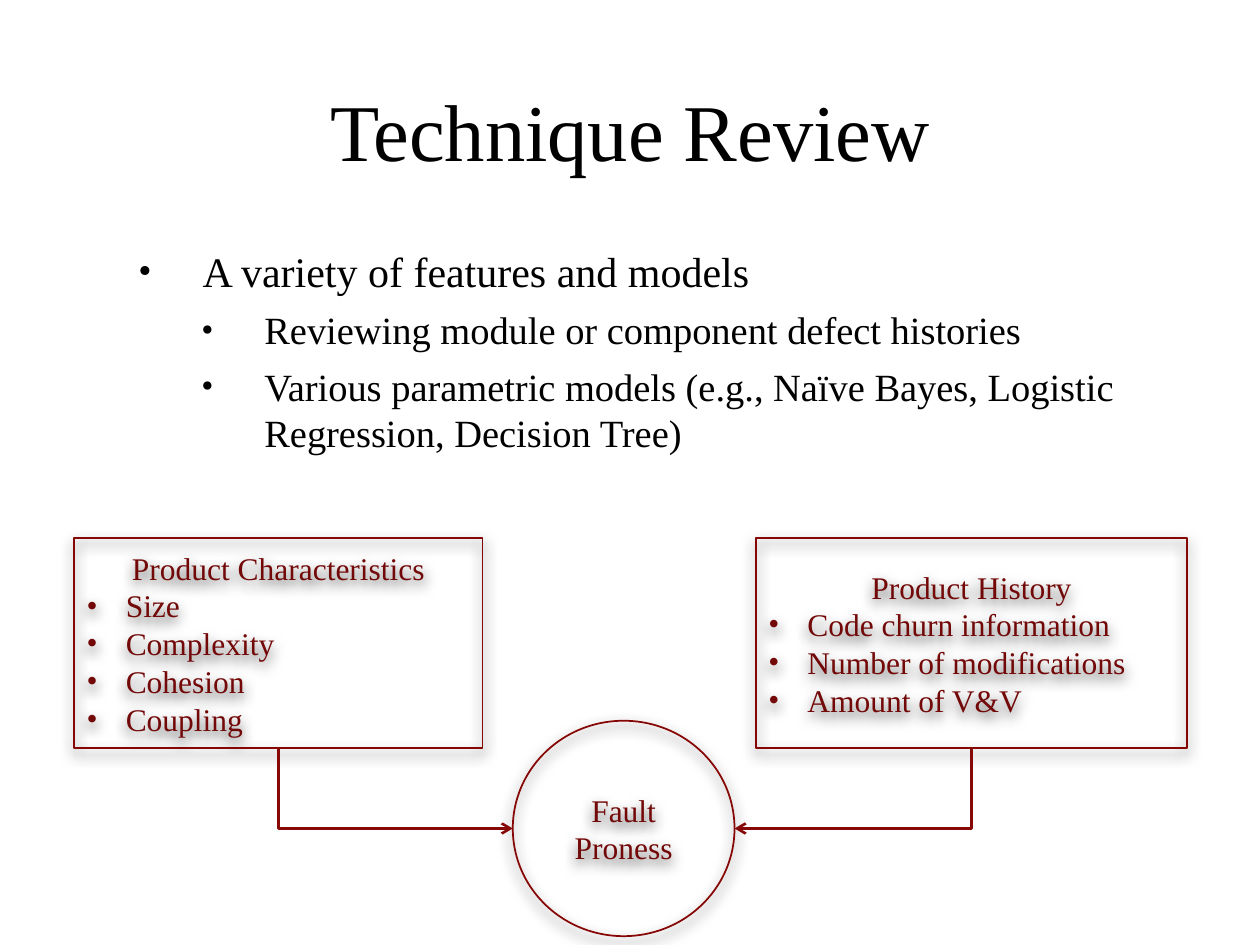
from lxml import etree
from pptx import Presentation
from pptx.dml.color import RGBColor
from pptx.enum.shapes import MSO_CONNECTOR, MSO_SHAPE
from pptx.enum.text import MSO_ANCHOR, PP_ALIGN
from pptx.oxml.ns import qn
from pptx.util import Inches, Pt

BLACK = RGBColor(0x00, 0x00, 0x00)
OUTLINE = RGBColor(0x86, 0x06, 0x05)
ARROW = RGBColor(0x86, 0x09, 0x08)
LABEL = RGBColor(0x72, 0x08, 0x08)
FONT = "Times New Roman"

RECTANGLE, OVAL = MSO_SHAPE.RECTANGLE, MSO_SHAPE.OVAL
ELBOW = MSO_CONNECTOR.ELBOW
LEFT, CENTER = PP_ALIGN.LEFT, PP_ALIGN.CENTER
TOP, MIDDLE = MSO_ANCHOR.TOP, MSO_ANCHOR.MIDDLE


def add_bullet(paragraph, indent, hanging, percent=100):
    properties = paragraph._p.get_or_add_pPr()
    properties.set("marL", str(Inches(indent)))
    properties.set("indent", str(-Inches(hanging)))
    etree.SubElement(properties, qn("a:buSzPct"), val=str(percent * 1000))
    etree.SubElement(properties, qn("a:buFont"), typeface=FONT)
    etree.SubElement(properties, qn("a:buChar"), char="•")


def style(paragraph, size, color, align=LEFT):
    paragraph.alignment = align
    for run in paragraph.runs:
        run.font.name = FONT
        run.font.size = Pt(size)
        run.font.color.rgb = color


def add_text_area(slide, box, lines, anchor):
    frame = slide.shapes.add_textbox(*map(Inches, box)).text_frame
    frame.word_wrap = True
    frame.vertical_anchor = anchor
    frame.text = "\n".join(lines)
    return frame.paragraphs


def add_title(slide, box, title):
    style(add_text_area(slide, box, [title], MIDDLE)[0], 46, BLACK, CENTER)


def add_outline(slide, box, topic, details):
    first, *rest = add_text_area(slide, box, [topic, *details], TOP)
    add_bullet(first, 0.51, 0.51, 90)
    style(first, 24, BLACK)
    for paragraph in rest:
        paragraph.level = 1
        add_bullet(paragraph, 1, 0.5, 90)
        paragraph.space_before = Pt(6)
        style(paragraph, 22, BLACK)


def add_soft_shadow(shape):
    effects = etree.SubElement(shape._element.spPr, qn("a:effectLst"))
    shadow = etree.SubElement(
        effects, qn("a:outerShdw"), blurRad=str(Pt(8)), dist=str(Pt(3)),
        dir=str(90 * 60000), rotWithShape="0")
    color = etree.SubElement(shadow, qn("a:srgbClr"), val=str(BLACK))
    etree.SubElement(color, qn("a:alpha"), val="75000")


def add_node(slide, kind, box, heading, items=()):
    node = slide.shapes.add_shape(kind, *map(Inches, box))
    node.fill.background()
    node.line.color.rgb = OUTLINE
    node.line.width = Pt(1)
    add_soft_shadow(node)
    frame = node.text_frame
    frame.word_wrap = True
    frame.vertical_anchor = MIDDLE
    frame.text = "\n".join([heading, *items])
    first, *rest = frame.paragraphs
    style(first, 18, LABEL, CENTER)
    for paragraph in rest:
        add_bullet(paragraph, 0.31, 0.31)
        style(paragraph, 18, LABEL)


def add_down_then_across(slide, start, end):
    """Bent arrow that drops from start, then turns sideways to end."""
    (x1, y1), (x2, y2) = start, end
    # The preset runs across then down, so lay it out turned a quarter
    drop, across = y2 - y1, abs(x2 - x1)
    left = (x1 + x2 - drop) / 2
    top = (y1 + y2 - across) / 2
    arrow = slide.shapes.add_connector(
        ELBOW, *map(Inches, (left, top, left + drop, top + across)))
    arrow.line.color.rgb = ARROW
    arrow.line.width = Pt(1.5)
    properties = arrow._element.spPr
    properties.find(qn("a:prstGeom")).set("prst", "bentConnector2")
    transform = properties.find(qn("a:xfrm"))
    heads_right = x2 > x1
    transform.set("rot", str((270 if heads_right else 90) * 60000))
    if heads_right:
        transform.set("flipH", "1")
    etree.SubElement(properties.find(qn("a:ln")), qn("a:tailEnd"), type="arrow")
    etree.SubElement(properties, qn("a:effectLst"))


def add_fault_diagram(slide, box):
    left, top, width, height = box
    node_height = 1.67
    characteristics_width, history_width = 3.24, 3.42
    history_left = left + width - history_width
    circle_left, circle_width, circle_height = left + 3.48, 1.76, 1.71
    circle_top = top + height - circle_height

    # Inputs and outcome
    add_node(slide, RECTANGLE, (left, top, characteristics_width, node_height),
             "Product Characteristics",
             ["Size", "Complexity", "Cohesion", "Coupling"])
    add_node(slide, RECTANGLE, (history_left, top, history_width, node_height),
             "Product History",
             ["Code churn information", "Number of modifications", "Amount of V&V"])
    add_node(slide, OVAL, (circle_left, circle_top, circle_width, circle_height),
             "Fault Proness")

    # Arrows from each input to the outcome
    bottom = top + node_height
    middle = circle_top + circle_height / 2
    add_down_then_across(slide, (history_left + history_width / 2, bottom),
                         (circle_left + circle_width, middle))
    add_down_then_across(slide, (left + characteristics_width / 2, bottom),
                         (circle_left, middle))


def main():
    presentation = Presentation()
    presentation.slide_width = Inches(10)
    presentation.slide_height = Inches(7.5)
    slide = presentation.slides.add_slide(presentation.slide_layouts[6])
    add_title(slide, (1, 0.55, 8, 0.95), "Technique Review")
    add_outline(slide, (1, 1.9, 8, 4.44), "A variety of features and models", [
        "Reviewing module or component defect histories",
        "Various parametric models (e.g., Naïve Bayes, Logistic Regression, "
        "Decision Tree)",
    ])
    add_fault_diagram(slide, (0.59, 4.27, 8.83, 3.16))
    presentation.save("out.pptx")


if __name__ == "__main__":
    main()
